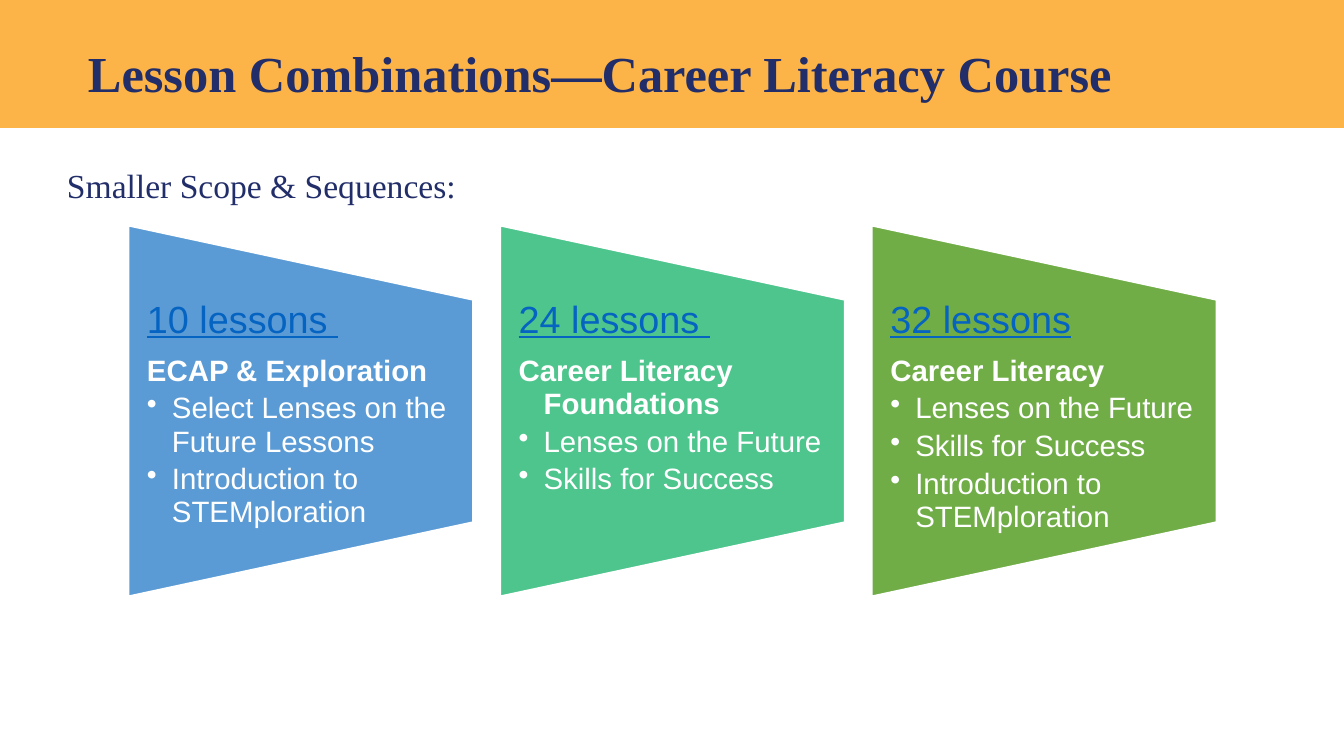
import pptx
import pptx.util
import pptx.dml.color
import pptx.enum.shapes
import pptx.enum.text
from lxml import etree

RGBColor = pptx.dml.color.RGBColor
ORANGE = RGBColor(0xFC, 0xB4, 0x48)
NAVY = RGBColor(0x22, 0x2E, 0x69)
BLUE = RGBColor(0x5B, 0x9B, 0xD5)
TEAL = RGBColor(0x4D, 0xC5, 0x8D)
GREEN = RGBColor(0x70, 0xAD, 0x47)
LINK = RGBColor(0x05, 0x63, 0xC1)
WHITE = RGBColor(0xFF, 0xFF, 0xFF)

EMU_PER_PX = 914400 / 100.8
SLIDE_WIDTH, SLIDE_HEIGHT = 1344, 756
SERIF, SANS = "Times New Roman", "Arial"
ANCHOR = pptx.enum.text.MSO_ANCHOR
SHAPES = pptx.enum.shapes.MSO_SHAPE

COURSES = [
    (BLUE, "10 lessons ", "ECAP & Exploration",
     ["Select Lenses on the Future Lessons", "Introduction to STEMploration"]),
    (TEAL, "24 lessons ", "Career Literacy Foundations",
     ["Lenses on the Future", "Skills for Success"]),
    (GREEN, "32 lessons", "Career Literacy",
     ["Lenses on the Future", "Skills for Success", "Introduction to STEMploration"]),
]


def px(length):
    return pptx.util.Emu(round(length * EMU_PER_PX))


def add_filled_shape(slide, kind, left, top, width, height, color):
    shape = slide.shapes.add_shape(kind, px(left), px(top), px(width), px(height))
    shape.shadow.inherit = False
    shape.fill.solid()
    shape.fill.fore_color.rgb = color
    shape.line.fill.background()
    return shape


def add_text_frame(slide, left, top, width, height, anchor, margin_x, margin_y):
    box = slide.shapes.add_textbox(px(left), px(top), px(width), px(height))
    frame = box.text_frame
    frame.word_wrap = True
    frame.vertical_anchor = anchor
    frame.margin_left = frame.margin_right = px(margin_x)
    frame.margin_top = frame.margin_bottom = px(margin_y)
    return frame


def write(paragraph, text, size, color, font=SANS, bold=False, underline=False,
          line_spacing=0.9, space_after=0, hanging=0, bullet=None):
    if hanging:
        properties = paragraph._p.get_or_add_pPr()
        properties.set("marL", str(px(hanging)))
        properties.set("indent", str(-px(hanging)))
    if bullet:
        namespace = pptx.oxml.ns.qn("a:buChar")
        etree.SubElement(properties, namespace).set("char", bullet)
    paragraph.line_spacing = line_spacing
    paragraph.space_after = pptx.util.Pt(space_after)
    run = paragraph.add_run()
    run.text = text
    run.font.size = pptx.util.Pt(size)
    run.font.color.rgb = color
    run.font.name = font
    run.font.bold = bold
    run.font.underline = underline


def add_heading(slide, left, top, width, height, text, size, bold):
    frame = add_text_frame(slide, left, top, width, height, ANCHOR.BOTTOM, 10, 5)
    write(frame.paragraphs[0], text, size, NAVY, font=SERIF, bold=bold)


def add_course(slide, left, top, width, height, course):
    """Draw a panel tapering to the right, with its lesson list inside."""
    color, lessons, name, topics = course
    # The preset tapers downwards, so it is turned about the centre of the box.
    turn = (height - width) / 2
    panel = add_filled_shape(slide, SHAPES.FLOWCHART_MANUAL_OPERATION,
                             left - turn, top + turn, height, width, color)
    panel.rotation = 270
    panel.line.color.rgb = WHITE
    panel.line.width = pptx.util.Pt(2)

    inset = height // 5
    frame = add_text_frame(slide, left, top + inset, width, height - 2 * inset,
                           ANCHOR.TOP, 19, 0)
    write(frame.paragraphs[0], lessons, 27, LINK, underline=True,
          line_spacing=0.94, space_after=9.45)
    for text, bullet in [(name, None)] + [(topic, "•") for topic in topics]:
        write(frame.add_paragraph(), text, 21, WHITE, bold=bullet is None,
              line_spacing=0.94, space_after=3.15, hanging=25, bullet=bullet)


def add_courses(slide, left, top, width, height, gap):
    panel_width = (width - gap * (len(COURSES) - 1)) / len(COURSES)
    for index, course in enumerate(COURSES):
        add_course(slide, left + index * (panel_width + gap), top,
                   panel_width, height, course)


def main():
    presentation = pptx.Presentation()
    presentation.slide_width = px(SLIDE_WIDTH)
    presentation.slide_height = px(SLIDE_HEIGHT)
    slide = presentation.slides.add_slide(presentation.slide_layouts[6])
    add_filled_shape(slide, SHAPES.RECTANGLE, 0, 0, SLIDE_WIDTH, 128, ORANGE)
    add_heading(slide, 78, 20, 1159, 88,
                "Lesson Combinations—Career Literacy Course", 36, True)
    add_courses(slide, 128, 225, 1089, 372, 26)
    add_heading(slide, 57, 123, 1159, 88, "Smaller Scope & Sequences:", 24, False)
    presentation.save("out.pptx")


if __name__ == "__main__":
    main()
